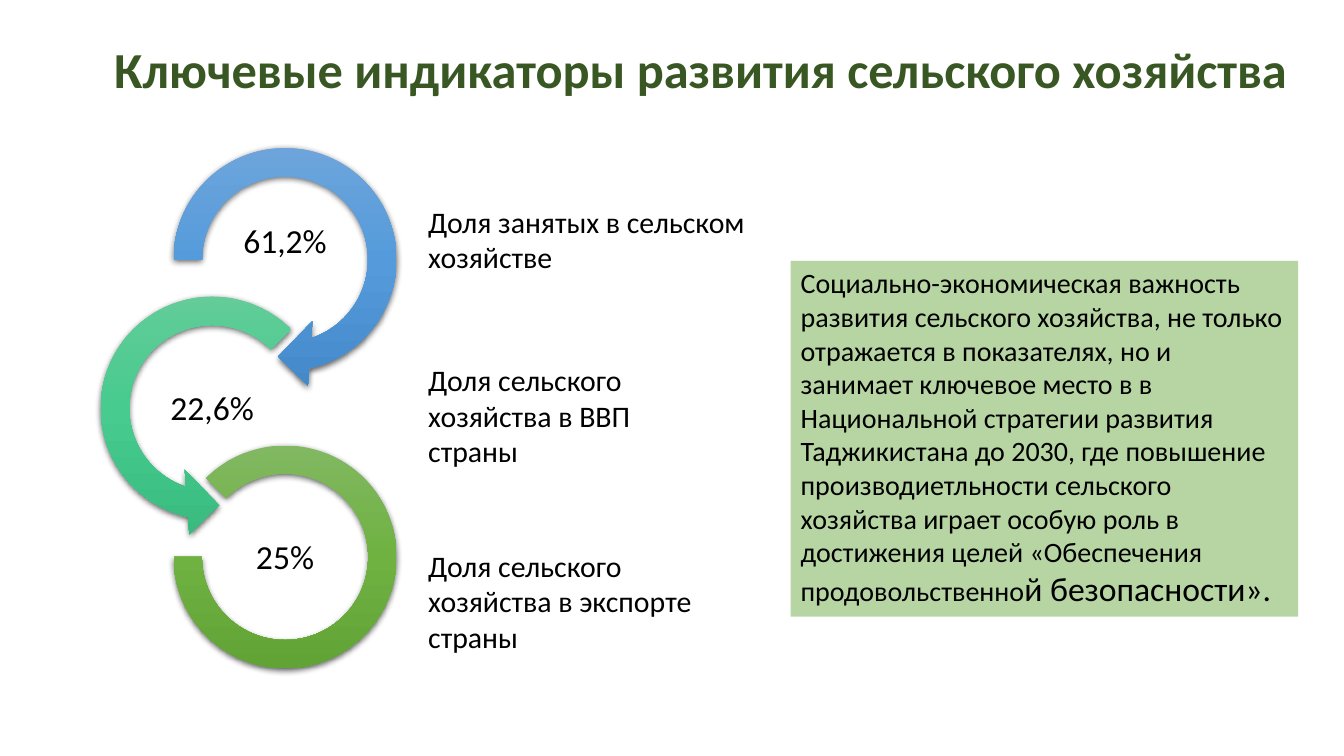
from copy import deepcopy
from dataclasses import dataclass

from lxml import etree
from pptx import Presentation
from pptx import util as u
from pptx.dml.color import RGBColor
from pptx.enum import shapes, text
from pptx.oxml import parse_xml
from pptx.oxml.ns import nsdecls, qn


@dataclass(frozen=True)
class Theme:
    font: str = "Calibri"
    ink: str = "000000"
    heading: str = "385723"
    panel: str = "70AD47"
    blue: tuple = ("71A6DB", "559BDB", "448ACA")
    mint: tuple = ("67CC9A", "47CB8E", "39BB7F")
    green: tuple = ("81B861", "6FB242", "62A336")
    title_size: float = 36
    value_size: float = 24
    caption_size: float = 21.3
    panel_size: float = 20


class IndicatorSlide:
    """Places elements on a grid of 24 columns and 12 rows."""

    COLUMNS, ROWS = 24, 12

    def __init__(self, deck, theme):
        self.theme = theme
        self.column = deck.slide_width / self.COLUMNS
        self.row = deck.slide_height / self.ROWS
        self.slide = deck.slides.add_slide(deck.slide_layouts[5])

    def box(self, left, top, width, height):
        return [u.Emu(round(n * unit)) for n, unit in zip(
            (left, top, width, height), (self.column, self.row) * 2)]

    def centred(self, x, y, width, height):
        return self.box(x - width / 2, y - height / 2, width, height)

    def set_words(self, shape, runs, color=None, bold=False, spacing=1.0,
                  align=text.PP_ALIGN.LEFT, **frame_format):
        frame = shape.text_frame
        for name, value in {"word_wrap": True, **frame_format}.items():
            setattr(frame, name, value)
        paragraph = frame.paragraphs[0]
        for name, value in {"alignment": align, "line_spacing": spacing}.items():
            setattr(paragraph, name, value)
        for words, size in runs:
            run = paragraph.add_run()
            run.text = words
            style = {"name": self.theme.font, "size": u.Pt(size), "bold": bold}
            for name, value in style.items():
                setattr(run.font, name, value)
            run.font.color.rgb = RGBColor.from_string(color or self.theme.ink)

    def title(self, words, *place):
        heading = self.slide.shapes.title
        for name, value in zip(("left", "top", "width", "height"), self.box(*place)):
            setattr(heading, name, value)
        self.set_words(heading, [(words, self.theme.title_size)], self.theme.heading,
                       True, 0.9, text.PP_ALIGN.CENTER,
                       vertical_anchor=text.MSO_ANCHOR.BOTTOM,
                       auto_size=text.MSO_AUTO_SIZE.NONE)

    def ring(self, group, preset, x, y, size, adjustments, colors):
        height = size * self.column / self.row
        ring = group.shapes.add_shape(preset, *self.centred(x, y, size, height))
        for index, value in enumerate(adjustments):
            ring.adjustments[index] = value
        ring.line.fill.background()
        self.shade(ring, colors)

    def shade(self, ring, colors):
        # Three-stop gradient running downwards
        ring.fill.gradient()
        ring.fill.gradient_angle = 270
        properties = ring._element.spPr
        stops = properties.find(".//" + qn("a:gsLst"))
        stops.insert(1, deepcopy(stops[0]))
        for stop, color, position in zip(ring.fill.gradient_stops, colors, (0, 0.5, 1)):
            stop.color.rgb = RGBColor.from_string(color)
            stop.position = position
        # Soft shadow below
        properties.append(parse_xml(
            f'<a:effectLst {nsdecls("a")}><a:outerShdw blurRad="{u.Pt(4.5)}" '
            f'dist="{u.Pt(1.5)}" dir="5400000" algn="ctr" rotWithShape="0">'
            '<a:srgbClr val="000000"><a:alpha val="63000"/></a:srgbClr>'
            '</a:outerShdw></a:effectLst>'))

    def value(self, group, words, x, y):
        label = group.shapes.add_textbox(*self.centred(x, y, 2.57, 1.14))
        sides = ("left", "right", "top", "bottom")
        self.set_words(label, [(words, self.theme.value_size)], spacing=0.9,
                       align=text.PP_ALIGN.CENTER,
                       vertical_anchor=text.MSO_ANCHOR.MIDDLE,
                       **{f"margin_{side}": u.Inches(0.02) for side in sides})

    def caption(self, words, *place):
        caption = self.slide.shapes.add_textbox(*self.box(*place))
        self.set_words(caption, [(words, self.theme.caption_size)],
                       auto_size=text.MSO_AUTO_SIZE.SHAPE_TO_FIT_TEXT)

    def panel(self, runs, *place):
        panel = self.slide.shapes.add_shape(
            shapes.MSO_SHAPE.RECTANGLE, *self.box(*place))
        panel.shadow.inherit = False
        panel.fill.solid()
        panel.fill.fore_color.rgb = RGBColor.from_string(self.theme.panel)
        tint = panel._element.spPr.find(qn("a:solidFill"))[0]
        etree.SubElement(tint, qn("a:alpha")).set("val", "50000")
        panel.line.fill.background()
        self.set_words(panel, runs, vertical_anchor=text.MSO_ANCHOR.TOP,
                       auto_size=text.MSO_AUTO_SIZE.SHAPE_TO_FIT_TEXT)


def main():
    deck = Presentation()
    deck.slide_width, deck.slide_height = u.Inches(13.33), u.Inches(7.5)
    theme = Theme()
    page = IndicatorSlide(deck, theme)

    # Heading
    page.title("Ключевые индикаторы развития сельского хозяйства",
               1.33, -0.02, 22.38, 1.68)

    # Chain of rings: value, label shift, preset, centre column, size, bends, colours
    preset = shapes.MSO_SHAPE
    indicators = [
        ("61,2%", -0.27, preset.CIRCULAR_ARROW, 5.09, 4.63,
         (0.11, 11.42, 45, 108, 0.125), theme.blue),
        ("22,6%", 0.02, preset.LEFT_CIRCULAR_ARROW, 3.79, 4.63,
         (0.11, 11.42, 63, 189, 0.125), theme.mint),
        ("25%", 0.03, preset.BLOCK_ARC, 5.09, 3.98,
         (135, 108, 0.127), theme.green),
    ]
    first_row, pitch = 4.12, 2.36
    chain = page.slide.shapes.add_group_shape()
    for index, (share, shift, kind, x, size, bends, colors) in enumerate(indicators):
        y = first_row + index * pitch
        page.ring(chain, kind, x, y, size, bends, colors)
        page.value(chain, share, x, y + shift)

    # Captions beside the rings
    for meaning, top, width, height in [
        ("Доля занятых в сельском хозяйстве", 3.15, 7.18, 1.31),
        ("Доля сельского хозяйства в ВВП страны", 5.66, 4.72, 1.89),
        ("Доля сельского хозяйства в экспорте страны", 8.61, 6.05, 1.89),
    ]:
        page.caption(meaning, 7.47, top, width, height)

    # Strategy panel
    importance = (
        "Социально-экономическая важность развития сельского хозяйства, "
        "не только отражается в показателях, но и занимает ключевое место в в "
        "Национальной стратегии развития Таджикистана до 2030, где повышение "
        "производиетльности сельского хозяйства играет особую роль в "
        "достижения целей «Обеспечения продовольственно")
    page.panel([(importance, theme.panel_size),
                ("й безопасности».", theme.value_size)],
               14.12, 4.14, 9.06, 5.65)

    deck.save("out.pptx")


if __name__ == "__main__":
    main()
